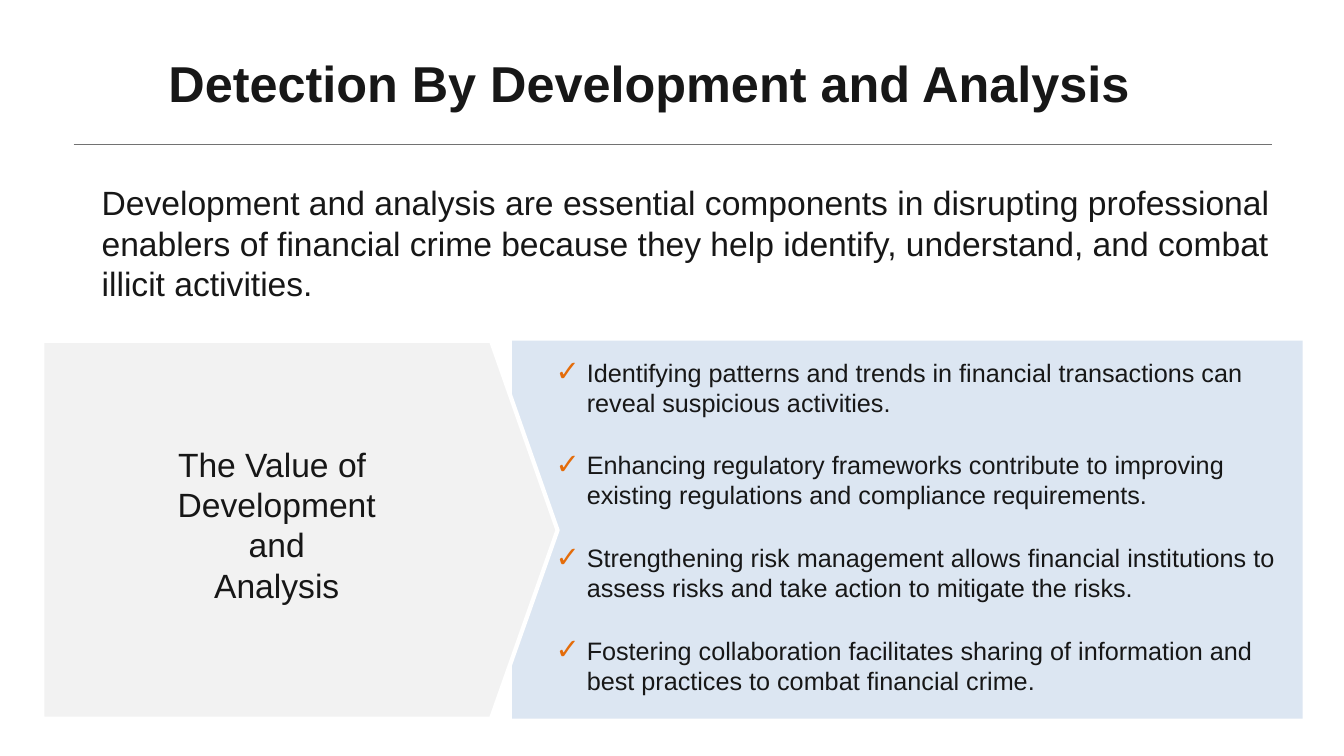
from lxml import etree
from pptx import Presentation
from pptx.dml.color import RGBColor
from pptx.enum.shapes import MSO_CONNECTOR, MSO_SHAPE
from pptx.enum.text import MSO_ANCHOR, MSO_AUTO_SIZE, PP_ALIGN
from pptx.oxml.ns import qn
from pptx.util import Pt

PX = 9144  # 100 px to the inch
FONT = "Arial"
INK = RGBColor(0x17, 0x17, 0x17)
RULE = RGBColor(0x72, 0x72, 0x72)
PALE_BLUE = RGBColor(0xDC, 0xE6, 0xF2)
PALE_GREY = RGBColor(0xF2, 0xF2, 0xF2)
WHITE = RGBColor(0xFF, 0xFF, 0xFF)
ORANGE = RGBColor(0xE4, 0x6C, 0x0A)
LEFT, CENTER = PP_ALIGN.LEFT, PP_ALIGN.CENTER
TOP, MIDDLE = MSO_ANCHOR.TOP, MSO_ANCHOR.MIDDLE
NO_FIT = MSO_AUTO_SIZE.NONE
RECTANGLE = MSO_SHAPE.RECTANGLE
STRAIGHT = MSO_CONNECTOR.STRAIGHT

INTRO = ("Development and analysis are essential components in disrupting professional "
         "enablers of financial crime because they help identify, understand, and combat "
         "illicit activities.")
VALUE_LINES = ["The Value of ", "Development", "and", "Analysis"]
BENEFITS = [
    "Identifying patterns and trends in financial transactions can reveal suspicious activities.",
    "Enhancing regulatory frameworks contribute to improving existing regulations and "
    "compliance requirements.",
    "Strengthening risk management allows financial institutions to assess risks and take "
    "action to mitigate the risks.",
    "Fostering collaboration facilitates sharing of information and best practices to combat "
    "financial crime.",
]


class SlideBuilder:
    def __init__(self, slide):
        self.slide = slide

    def rule(self, x1, y, x2):
        line = self.slide.shapes.add_connector(STRAIGHT, x1 * PX, y * PX, x2 * PX, y * PX)
        line.line.color.rgb = RULE
        line.line.width = Pt(0.5)
        etree.SubElement(line._element.spPr, qn("a:effectLst"))

    def panel(self, x, y, w, h, color):
        sp = self.slide.shapes.add_shape(RECTANGLE, x * PX, y * PX, w * PX, h * PX)
        sp.shadow.inherit = False
        sp.fill.solid()
        sp.fill.fore_color.rgb = color
        sp.line.fill.background()

    def pointer(self, x, y, w, h, tip, color):
        """Draw a panel whose right side ends in a point of depth tip."""
        builder = self.slide.shapes.build_freeform(x, y, scale=PX)
        shoulder = x + w - tip
        builder.add_line_segments([(shoulder, y), (x + w, y + h / 2),
                                   (shoulder, y + h), (x, y + h)], close=True)
        sp = builder.convert_to_shape()
        sp.shadow.inherit = False
        sp.fill.solid()
        sp.fill.fore_color.rgb = color
        sp.line.color.rgb = WHITE
        sp.line.width = Pt(3)

    def title(self, text, x, y, w, h):
        sp = self.slide.shapes.title
        self.place(sp, x, y, w, h)
        self.fill_text(sp, [text], 36, bold=True, anchor=MIDDLE)

    def text(self, lines, x, y, w, h, size, align=LEFT):
        sp = self.slide.shapes.add_textbox(x * PX, y * PX, w * PX, h * PX)
        self.fill_text(sp, lines, size, align)

    def checklist(self, items, x, y, w, h, size, gap, indent):
        sp = self.slide.placeholders[1]
        self.place(sp, x, y, w, h)
        self.fill_text(sp, items, size, gap=gap, indent=indent)

    def place(self, sp, x, y, w, h):
        sp.left, sp.top, sp.width, sp.height = x * PX, y * PX, w * PX, h * PX

    def fill_text(self, sp, lines, size, align=LEFT, bold=False, anchor=TOP, gap=0, indent=0):
        tf = sp.text_frame
        tf.word_wrap = True
        tf.auto_size = NO_FIT
        tf.vertical_anchor = anchor
        for i, line in enumerate(lines):
            p = tf.add_paragraph() if i else tf.paragraphs[0]
            if indent:
                self.check_bullet(p, indent)
            p.alignment = align
            p.space_before = Pt(gap if i else 0)
            r = p.add_run()
            r.text = line
            r.font.name = FONT
            r.font.size = Pt(size)
            r.font.bold = bold
            r.font.color.rgb = INK

    def check_bullet(self, p, indent):
        pPr = p._p.get_or_add_pPr()
        pPr.set("marL", str(indent * PX))
        pPr.set("indent", str(-indent * PX))
        color = etree.SubElement(pPr, qn("a:buClr"))
        etree.SubElement(color, qn("a:srgbClr"), val=str(ORANGE))
        etree.SubElement(pPr, qn("a:buSzPct"), val="115000")
        etree.SubElement(pPr, qn("a:buFont"), typeface=FONT)
        etree.SubElement(pPr, qn("a:buChar"), char="✓")


def main():
    prs = Presentation()
    prs.slide_width, prs.slide_height = 1333 * PX, 750 * PX
    s = prs.slides.add_slide(prs.slide_layouts[1])
    title, body = s.shapes.title, s.placeholders[1]
    builder = SlideBuilder(s)
    builder.rule(73, 143, 1262)
    builder.panel(508, 338, 784, 375, PALE_BLUE)
    builder.pointer(42, 338, 511, 375, 66, PALE_GREY)
    # Placeholders come first in the tree; raise them above the panels.
    for sp in (title, body):
        s.shapes._spTree.append(sp._element)
    builder.title("Detection By Development and Analysis", 157, 26, 1081, 112)
    builder.text(VALUE_LINES, 91, 435, 367, 171, 24, CENTER)
    builder.text([INTRO], 91, 176, 1186, 131, 24)
    builder.checklist(BENEFITS, 541, 349, 750, 353, 18, gap=23, indent=31)
    prs.save("out.pptx")


if __name__ == "__main__":
    main()
